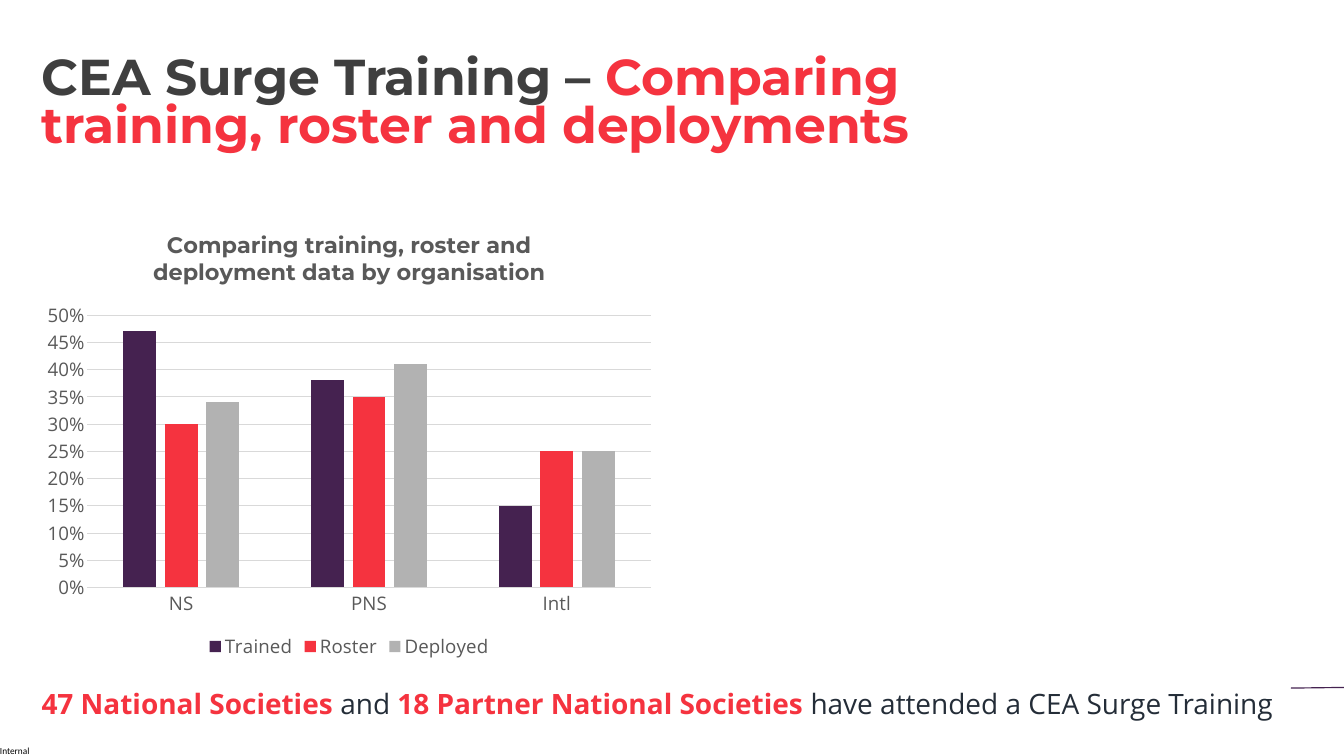
from collections import namedtuple

from lxml.etree import SubElement
from pptx import Presentation
from pptx.chart.data import CategoryChartData
from pptx.dml.color import RGBColor
from pptx.enum.chart import XL_CHART_TYPE, XL_LEGEND_POSITION, XL_TICK_MARK
from pptx.enum.shapes import MSO_CONNECTOR, MSO_SHAPE
from pptx.enum.text import MSO_ANCHOR, PP_ALIGN
from pptx.oxml.ns import qn
from pptx.util import Inches, Pt

Box = namedtuple("Box", "left top width height")

PURPLE, RED, SILVER = "452250", "F5333F", "B2B2B2"
CHARCOAL, NAVY, GREY, RULE = "3F3F3F", "242D38", "595959", "D9D9D9"
HEADING_FONT, BODY_FONT = "Montserrat", "Open Sans"


def color(value):
    """Turn a hex string into a colour."""
    return RGBColor.from_string(value)


def share(area, left, top, width, height):
    """Return the part of an area given in percent of its sides."""
    return Box(
        int(area.left + area.width * left / 100),
        int(area.top + area.height * top / 100),
        int(area.width * width / 100),
        int(area.height * height / 100),
    )


def style_font(font, name, size, ink, bold=False):
    """Set the look of a font."""
    font.name, font.size, font.bold = name, Pt(size), bold
    font.color.rgb = color(ink)


def add_spans(para, name, size, spans):
    """Add runs given as text, colour and weight."""
    for text, ink, bold in spans:
        span = para.add_run()
        span.text = text
        style_font(span.font, name, size, ink, bold)


def add_heading(page, box):
    """Place the two-colour slide heading."""
    frame = page.shapes.add_textbox(*box).text_frame
    frame.word_wrap = True
    para = frame.paragraphs[0]
    para.line_spacing = 0.8
    add_spans(para, HEADING_FONT, 54, [
        ("CEA Surge Training – ", CHARCOAL, True),
        ("Comparing training, roster and deployments", RED, True),
    ])


def style_axis(axis):
    """Set what both chart axes share."""
    axis.major_tick_mark = axis.minor_tick_mark = XL_TICK_MARK.NONE
    style_font(axis.tick_labels.font, BODY_FONT, 20, GREY)


def add_comparison_chart(page, box):
    """Place the clustered columns by organisation."""
    series_values = {
        "Trained": (PURPLE, (0.47, 0.38, 0.15)),
        "Roster": (RED, (0.3, 0.35, 0.25)),
        "Deployed": (SILVER, (0.34, 0.41, 0.25)),
    }
    data = CategoryChartData(number_format="0%")
    data.categories = ["NS", "PNS", "Intl"]
    for name, (_, values) in series_values.items():
        data.add_series(name, values)
    chart = page.shapes.add_chart(XL_CHART_TYPE.COLUMN_CLUSTERED, *box, data).chart
    style_font(chart.font, BODY_FONT, 20, GREY)

    chart.has_title = True
    title = chart.chart_title.text_frame
    title.text = "Comparing training, roster and deployment data by organisation"
    style_font(title.paragraphs[0].runs[0].font, HEADING_FONT, 24, GREY, True)
    chart.chart_title.include_in_layout = False

    chart.has_legend = True
    chart.legend.position = XL_LEGEND_POSITION.BOTTOM
    chart.legend.include_in_layout = False
    style_font(chart.legend.font, BODY_FONT, 20, GREY)

    plot = chart.plots[0]
    plot.gap_width, plot.overlap, plot.vary_by_categories = 219, -27, False
    for series, (ink, _) in zip(plot.series, series_values.values()):
        series.format.fill.solid()
        series.format.fill.fore_color.rgb = color(ink)

    value_axis = chart.value_axis
    value_axis.minimum_scale, value_axis.maximum_scale = 0, 0.5
    value_axis.major_unit = 0.05
    value_axis.tick_labels.number_format = "0%"
    value_axis.tick_labels.number_format_is_linked = False
    value_axis.format.line.fill.background()
    for axis in (chart.category_axis, value_axis):
        style_axis(axis)
    for line in (chart.category_axis.format.line, value_axis.major_gridlines.format.line):
        line.color.rgb = color(RULE)
        line.width = Pt(0.75)


def add_summary(page, box):
    """Place the attendance sentence on its white band."""
    band = page.shapes.add_shape(MSO_SHAPE.RECTANGLE, *box)
    band.shadow.inherit = False
    band.fill.solid()
    band.fill.fore_color.rgb = color("FFFFFF")
    band.line.fill.background()
    frame = band.text_frame
    frame.word_wrap = True
    frame.vertical_anchor = MSO_ANCHOR.MIDDLE
    para = frame.paragraphs[0]
    para.alignment = PP_ALIGN.LEFT
    add_spans(para, BODY_FONT, 30, [
        ("47 National Societies ", RED, True),
        ("and ", NAVY, False),
        ("18 Partner National Societies ", RED, True),
        ("have attended a CEA Surge Training", NAVY, False),
    ])


def add_edge_rule(page, box):
    """Draw the thin rule from lower left to upper right of its box."""
    rule = page.shapes.add_connector(
        MSO_CONNECTOR.STRAIGHT,
        box.left, box.top + box.height, box.left + box.width, box.top,
    )
    rule.line.color.rgb = color(PURPLE)
    rule.line.width = Pt(1.25)
    SubElement(rule.element.spPr, qn("a:effectLst"))


def add_sensitivity_label(page, box):
    """Place the small label in the bottom corner."""
    frame = page.shapes.add_textbox(*box).text_frame
    frame.margin_left = frame.margin_right = frame.margin_top = frame.margin_bottom = 0
    add_spans(frame.paragraphs[0], "Calibri", 10, [("Internal", "000000", False)])


def main():
    """Build and save the deck."""
    deck = Presentation()
    deck.slide_width, deck.slide_height = Inches(20), Inches(11.25)
    page = deck.slides.add_slide(deck.slide_layouts[6])
    area = Box(0, 0, deck.slide_width, deck.slide_height)
    add_edge_rule(page, share(area, 96.05, 90.93, 3.95, 0.09))
    add_sensitivity_label(page, share(area, 0, 98.58, 2.35, 1.5))
    add_heading(page, share(area, 2.6, 7.02, 79.65, 13.87))
    add_comparison_chart(page, share(area, 2.6, 28.09, 46.75, 59.64))
    add_summary(page, share(area, 2.6, 90.31, 92.8, 5.42))
    deck.save("out.pptx")


if __name__ == "__main__":
    main()
